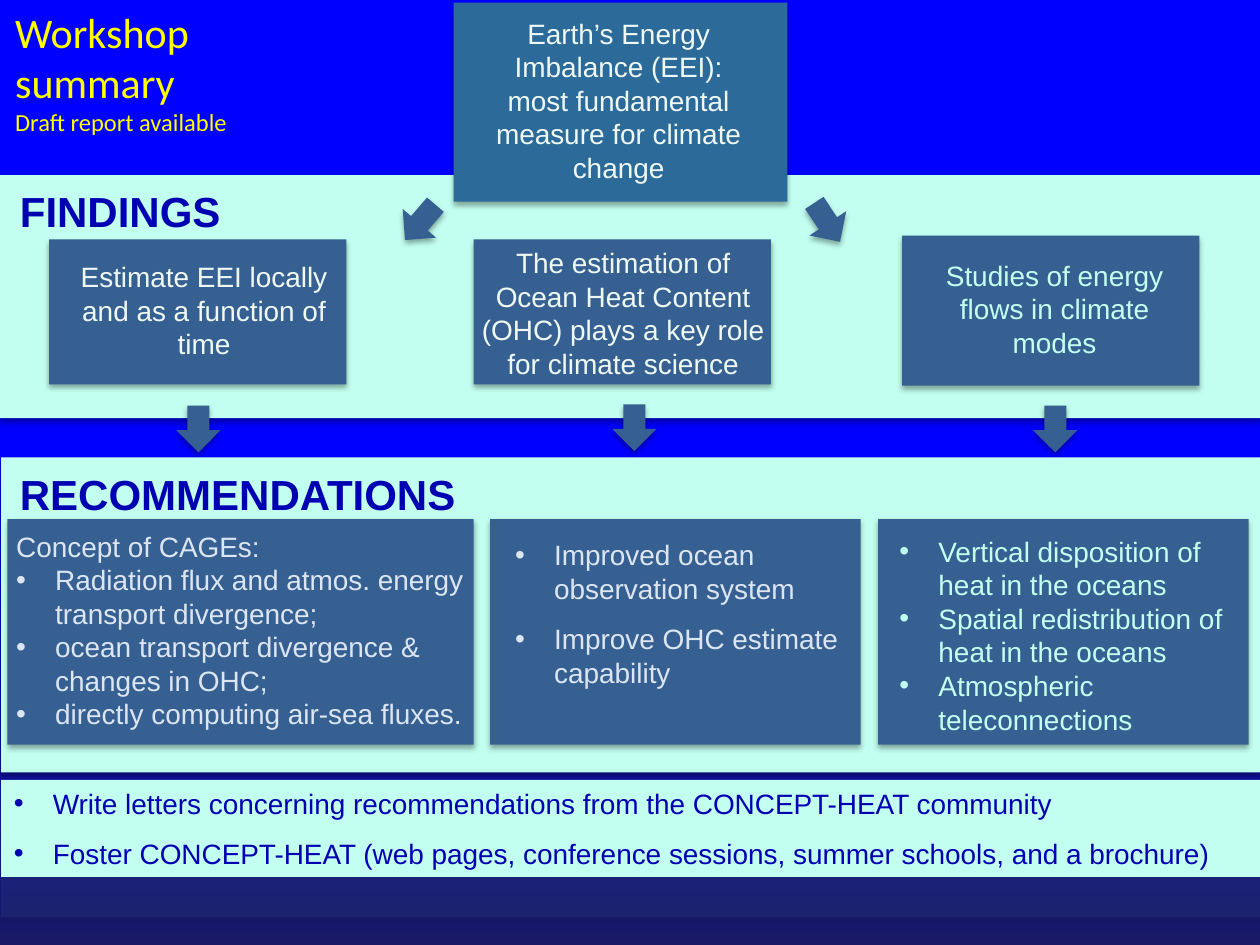
import pptx
import pptx.dml.color
import pptx.enum.shapes
import pptx.enum.text
import pptx.oxml
import pptx.oxml.ns
import pptx.util

COLS, ROWS = 100, 75
BLUE, MINT, NAVY, PALE, ICE = "376092", "C2FFF0", "0000B2", "EEF9F4", "DCE6F2"
SHAPE = pptx.enum.shapes.MSO_SHAPE
ALIGN = pptx.enum.text.PP_ALIGN

deck = pptx.Presentation()
deck.slide_width = pptx.util.Inches(10)
deck.slide_height = pptx.util.Inches(7.5)
slide = deck.slides.add_slide(deck.slide_layouts[1])


def hue(code):
    """Turn a hex string into a colour."""
    return pptx.dml.color.RGBColor.from_string(code)


def sub(box, x, y, w, h):
    """Give a box placed relative to the corner of another, in grid units."""
    return box[0] + x, box[1] + y, w, h


def span(box):
    """Turn a box in columns and rows into slide lengths."""
    wide, high = deck.slide_width / COLS, deck.slide_height / ROWS
    return [round(n * unit) for n, unit in zip(box, (wide, high, wide, high))]


def fit(shape, box):
    """Move and size a shape to a box."""
    shape.left, shape.top, shape.width, shape.height = span(box)


def node(tag, inner="", **attrs):
    """Make a drawing element."""
    space = pptx.oxml.ns.nsdecls("a")
    pairs = " ".join(f'{key}="{val}"' for key, val in attrs.items())
    return pptx.oxml.parse_xml(f"<a:{tag} {space} {pairs}>{inner}</a:{tag}>")


def form(box, fill, kind=SHAPE.RECTANGLE, turn=0, alpha=None, shade=True):
    """Draw a filled preset shape, with a soft shadow if wanted."""
    shape = slide.shapes.add_shape(kind, *span(box))
    shape.rotation = turn
    shape.fill.solid()
    shape.fill.fore_color.rgb = hue(fill)
    shape.line.fill.background()
    shape.shadow.inherit = False
    props = shape._element.spPr
    if alpha:
        props.find(".//" + pptx.oxml.ns.qn("a:srgbClr")).append(node("alpha", val=alpha * 1000))
    if shade:
        black = '<a:srgbClr val="000000"><a:alpha val="35000"/></a:srgbClr>'
        props.find(pptx.oxml.ns.qn("a:effectLst")).append(
            node("outerShdw", black, blurRad=39370, dist=22860, dir=5400000, rotWithShape=0))
    return shape


def write(shape, lines, size=16, rest=None, color=NAVY, font="Arial", bold=False,
          align=ALIGN.LEFT, bullet=None, gap=0):
    """Fill a shape with paragraphs; bullets start at the line numbered bullet."""
    frame = shape.text_frame
    frame.word_wrap = True
    frame.auto_size = pptx.enum.text.MSO_AUTO_SIZE.NONE
    frame.vertical_anchor = pptx.enum.text.MSO_ANCHOR.TOP
    for pos, line in enumerate(lines):
        para = frame.add_paragraph() if pos else frame.paragraphs[0]
        para.alignment = align
        para.space_before = pptx.util.Pt(gap if pos else 0)
        run = para.add_run()
        run.text = line
        run.font.name, run.font.bold = font, bold
        run.font.size = pptx.util.Pt(rest if rest and pos else size)
        run.font.color.rgb = hue(color)
        if bullet is not None and pos >= bullet:
            props = para._p.get_or_add_pPr()
            dent = pptx.util.Inches(0.31)
            props.set("marL", str(dent))
            props.set("indent", str(-dent))
            props.append(node("buFont", typeface="Arial"))
            props.append(node("buChar", char="•"))


def label(box, lines, **look):
    """Add a text box."""
    write(slide.shapes.add_textbox(*span(box)), lines, **look)


def arrow(box, x, y, turn):
    """Draw a block arrow inside a region."""
    form(sub(box, x, y, 3.7, 3.5), BLUE, SHAPE.RIGHT_ARROW, turn)


def ground():
    """Paint the blue backdrop that darkens to the foot."""
    fill = slide.background.fill
    fill.gradient()
    fill.gradient_angle = 270
    for stop, spot, code in zip(fill.gradient_stops, (0.5, 1), ("0000FF", "191966")):
        stop.position, stop.color.rgb = spot, hue(code)


def title(box):
    """Place the title and its note."""
    fit(slide.shapes.title, box)
    write(slide.shapes.title, ["Workshop summary", "Draft report available"],
          size=24, rest=14, color="FFFF00", font="Calibri")


def topic(box):
    """Place the main statement."""
    form(box, "2C6A99")
    write(form(sub(box, 0.1, 0.6, 26, 14.5), "2C6A99", shade=False),
          ["Earth’s Energy Imbalance (EEI):", "most fundamental measure for climate change"],
          color=PALE, align=ALIGN.CENTER)


def finds(box):
    """Place the band of findings with its cards and arrows."""
    form(box, MINT)
    label(sub(box, 0.6, 0.3, 19.4, 5), ["FINDINGS"], size=24, bold=True)
    cards = [
        ((3.9, 5.1, 23.6, 11.5), (3.9, 6.2, 24.6, 9.1), PALE,
         "Estimate EEI locally and as a function of time"),
        ((37.6, 5.1, 23.6, 11.5), (36.9, 5.1, 25.1, 11.8), PALE,
         "The estimation of Ocean Heat Content (OHC) plays a key role for climate science"),
        ((71.6, 4.8, 23.6, 11.9), (71.9, 6.1, 23.6, 9.1), MINT,
         "Studies of energy flows in climate modes")]
    for card, area, ink, words in cards:
        form(sub(box, *card), BLUE)
        label(sub(box, *area), [words], color=ink, align=ALIGN.CENTER)
    for x, y, turn in ((31.5, 2, 130.7), (63.8, 2, 56.5),
                       (13.9, 18.4, 90), (48.5, 18.3, 90), (81.9, 18.4, 90)):
        arrow(box, x, y, turn)


def advice(box):
    """Place the band of recommendations with its listed cards."""
    form(box, MINT)
    label(sub(box, 0.5, 0.4, 37.7, 5), ["RECOMMENDATIONS"], size=24, bold=True)
    cards = [
        (0.5, 37, (0.2, 5.2, 38.8, 17.2), dict(color=ICE, bullet=1),
         ["Concept of CAGEs:",
          "Radiation flux and atmos. energy transport divergence;",
          "ocean transport divergence & changes in OHC;",
          "directly computing air-sea fluxes."]),
        (38.8, 29.4, (39.8, 5.9, 28.7, 13.1), dict(color=ICE, bullet=0, gap=9.5),
         ["Improved ocean observation system", "Improve OHC estimate capability"]),
        (69.6, 29.4, (70.3, 5.6, 28.7, 17.2), dict(color=MINT, bullet=0),
         ["Vertical disposition of heat in the oceans",
          "Spatial redistribution of heat in the oceans",
          "Atmospheric teleconnections"])]
    for x, wide, area, look, lines in cards:
        form(sub(box, x, 4.9, wide, 17.9), BLUE)
        label(sub(box, *area), lines, **look)


def close(box):
    """Place the closing list on its translucent band."""
    form(box, BLUE, alpha=18)
    body = slide.placeholders[1]
    fit(body, sub(box, 0, 0, 99.9, 7.7))
    body.fill.solid()
    body.fill.fore_color.rgb = hue(MINT)
    write(body, ["Write letters concerning recommendations from the CONCEPT-HEAT community",
                 "Foster CONCEPT-HEAT (web pages, conference sessions, summer schools, "
                 "and a brochure)"], bullet=0, gap=9.5)
    slide.shapes._spTree.append(body._element)


def main():
    """Build and save the slide."""
    ground()
    title((0.2, 0, 19.2, 11.4))
    finds((0, 13.9, 100, 19.3))
    topic((36, 0.2, 26.5, 15.8))
    advice((0.1, 36.3, 100, 25))
    close((0.1, 61.9, 100, 10.9))
    deck.save("out.pptx")


if __name__ == "__main__":
    main()
